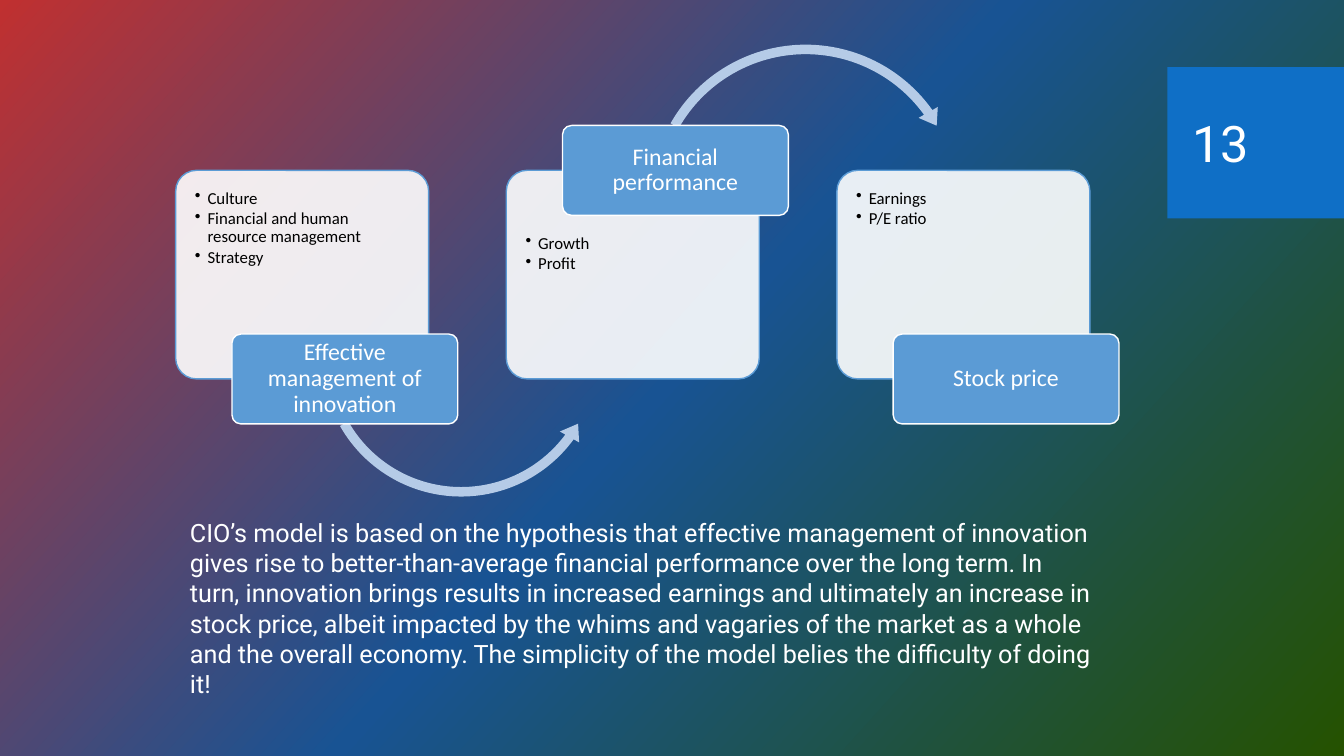
from copy import deepcopy

from lxml.etree import SubElement
from pptx import Presentation
from pptx.dml.color import RGBColor
from pptx.enum.shapes import MSO_SHAPE as Shape
from pptx.enum.text import MSO_ANCHOR as Anchor, PP_ALIGN as Align
from pptx.oxml.ns import qn
from pptx.util import Pt

WHITE = RGBColor(0xFF, 0xFF, 0xFF)
BLACK = RGBColor(0x00, 0x00, 0x00)
SKY = RGBColor(0x5B, 0x9B, 0xD5)
PALE = RGBColor(0xB5, 0xCB, 0xE7)
BADGE = RGBColor(0x0F, 0x6F, 0xC6)
RED = RGBColor(0xC0, 0x30, 0x30)
NAVY = RGBColor(0x18, 0x53, 0x93)
GREEN = RGBColor(0x25, 0x52, 0x00)

CARD_LEFT, CARD_TOP, CARD_WIDTH, CARD_HEIGHT = 125.5, 121.7, 180.7, 149
CARD_PITCH = 236.15
LABEL_SHIFT, LABEL_WIDTH, LABEL_HEIGHT = 40.2, 161.3, 64.2
ARROW_WIDTH, ARROWHEAD = 6.8, 7.9

# bullets, label, label on top, arrow (shape, left, top, size, angles)
STEPS = [
    (["Culture", "Financial and human resource management", "Strategy"],
     "Effective management of innovation", False,
     (Shape.LEFT_CIRCULAR_ARROW, 225.4, 151.2, 208, (4.04, 21.8, 90.25))),
    (["Growth", "Profit"], "Financial performance", True,
     (Shape.CIRCULAR_ARROW, 460, 27.4, 231, (3.6, 194.65, 125.76))),
    (["Earnings", "P/E ratio"], "Stock price", False, None),
]
SUMMARY = (
    "CIO’s model is based on the hypothesis that effective management of innovation "
    "gives rise to better-than-average financial performance over the long term. In "
    "turn, innovation brings results in increased earnings and ultimately an increase in "
    "stock price, albeit impacted by the whims and vagaries of the market as a whole "
    "and the overall economy. The simplicity of the model belies the difficulty of doing it!"
)


class ModelSlide:
    card_font = {"name": "Calibri", "size": Pt(12)}
    label_font = {"name": "Calibri", "size": Pt(17)}
    body_font = {"name": "Roboto", "size": Pt(18)}
    number_font = {"name": "Roboto", "size": Pt(36)}

    def __init__(self, page):
        self.page = page

    def background(self, colors, angle):
        """Fill the page with evenly spaced gradient stops, angle clockwise."""
        fill = self.page.background.fill
        fill.gradient()
        fill.gradient_angle = 360 - angle
        stop_list = self.page.element.find(".//" + qn("a:gsLst"))
        while len(stop_list) < len(colors):
            stop_list.append(deepcopy(stop_list[-1]))
        for index, (stop, color) in enumerate(zip(fill.gradient_stops, colors)):
            stop.position = index / (len(colors) - 1)
            stop.color.rgb = color

    def shape(self, kind, left, top, width, height, fill, line=None, adjust=()):
        shape = self.page.shapes.add_shape(kind, Pt(left), Pt(top), Pt(width), Pt(height))
        shape.shadow.inherit = False
        shape.fill.solid()
        shape.fill.fore_color.rgb = fill
        if line is None:
            shape.line.fill.background()
        else:
            shape.line.color.rgb = line
            shape.line.width = Pt(1)
        for index, value in enumerate(adjust):
            shape.adjustments[index] = value
        return shape

    def fill_text(self, box, lines, font, color, frame=None, layout=None, bullet=False):
        text = box.text_frame
        text.word_wrap = True
        for name, value in (frame or {}).items():
            setattr(text, name, value)
        for index, line in enumerate(lines):
            para = text.paragraphs[0] if index == 0 else text.add_paragraph()
            if bullet:
                self.bullet(para)
            for name, value in (layout or {}).items():
                setattr(para, name, value)
            span = para.add_run()
            span.text = line
            for name, value in font.items():
                setattr(span.font, name, value)
            span.font.color.rgb = color

    def bullet(self, para):
        properties = para._p.get_or_add_pPr()
        properties.set("marL", str(Pt(9)))
        properties.set("indent", str(-Pt(9)))
        SubElement(properties, qn("a:buChar")).set("char", "•")

    def card(self, left, bullets, top_inset):
        box = self.shape(Shape.ROUNDED_RECTANGLE, left, CARD_TOP, CARD_WIDTH, CARD_HEIGHT,
                         WHITE, SKY, [0.1])
        solid = box.element.spPr.find(qn("a:solidFill"))
        SubElement(solid[0], qn("a:alpha")).set("val", "90000")
        frame = {"margin_left": Pt(9.4), "margin_right": Pt(9.4),
                 "margin_top": Pt(top_inset), "vertical_anchor": Anchor.TOP}
        layout = {"alignment": Align.LEFT, "line_spacing": 0.9, "space_after": Pt(1.8)}
        self.fill_text(box, bullets, self.card_font, BLACK, frame, layout, bullet=True)

    def arrow(self, kind, left, top, size, angles):
        adjust = (ARROW_WIDTH / size, *angles, ARROWHEAD / size)
        self.shape(kind, left, top, size, size, PALE, adjust=adjust)

    def label(self, left, top, text):
        box = self.shape(Shape.ROUNDED_RECTANGLE, left, top, LABEL_WIDTH, LABEL_HEIGHT,
                         SKY, WHITE, [0.1])
        frame = {"margin_left": Pt(2.7), "margin_right": Pt(2.7), "margin_top": Pt(1.8),
                 "margin_bottom": Pt(1.8), "vertical_anchor": Anchor.MIDDLE}
        layout = {"alignment": Align.CENTER, "line_spacing": 0.9}
        self.fill_text(box, [text], self.label_font, WHITE, frame, layout)

    def text(self, left, top, width, height, line, font, anchor=Anchor.TOP):
        box = self.page.shapes.add_textbox(Pt(left), Pt(top), Pt(width), Pt(height))
        self.fill_text(box, [line], font, WHITE, {"vertical_anchor": anchor})


def main():
    deck = Presentation()
    deck.slide_width, deck.slide_height = Pt(960), Pt(540)
    slide = ModelSlide(deck.slides.add_slide(deck.slide_layouts[6]))
    slide.background([RED, NAVY, GREEN], 42)
    slide.shape(Shape.RECTANGLE, 833.8, 48, 126.2, 108, BADGE)

    for index, (bullets, label, on_top, arrow) in enumerate(STEPS):
        left = CARD_LEFT + index * CARD_PITCH
        slide.card(left, bullets, 9.4 + (LABEL_HEIGHT / 2 if on_top else 0))
        if arrow:
            slide.arrow(*arrow)
        edge = CARD_TOP if on_top else CARD_TOP + CARD_HEIGHT
        slide.label(left + LABEL_SHIFT, edge - LABEL_HEIGHT / 2, label)

    slide.text(128.6, 365.8, 661, 138.2, SUMMARY, slide.body_font)
    slide.text(844.6, 59, 90.7, 85.7, "13", slide.number_font, Anchor.MIDDLE)
    deck.save("out.pptx")


if __name__ == "__main__":
    main()
